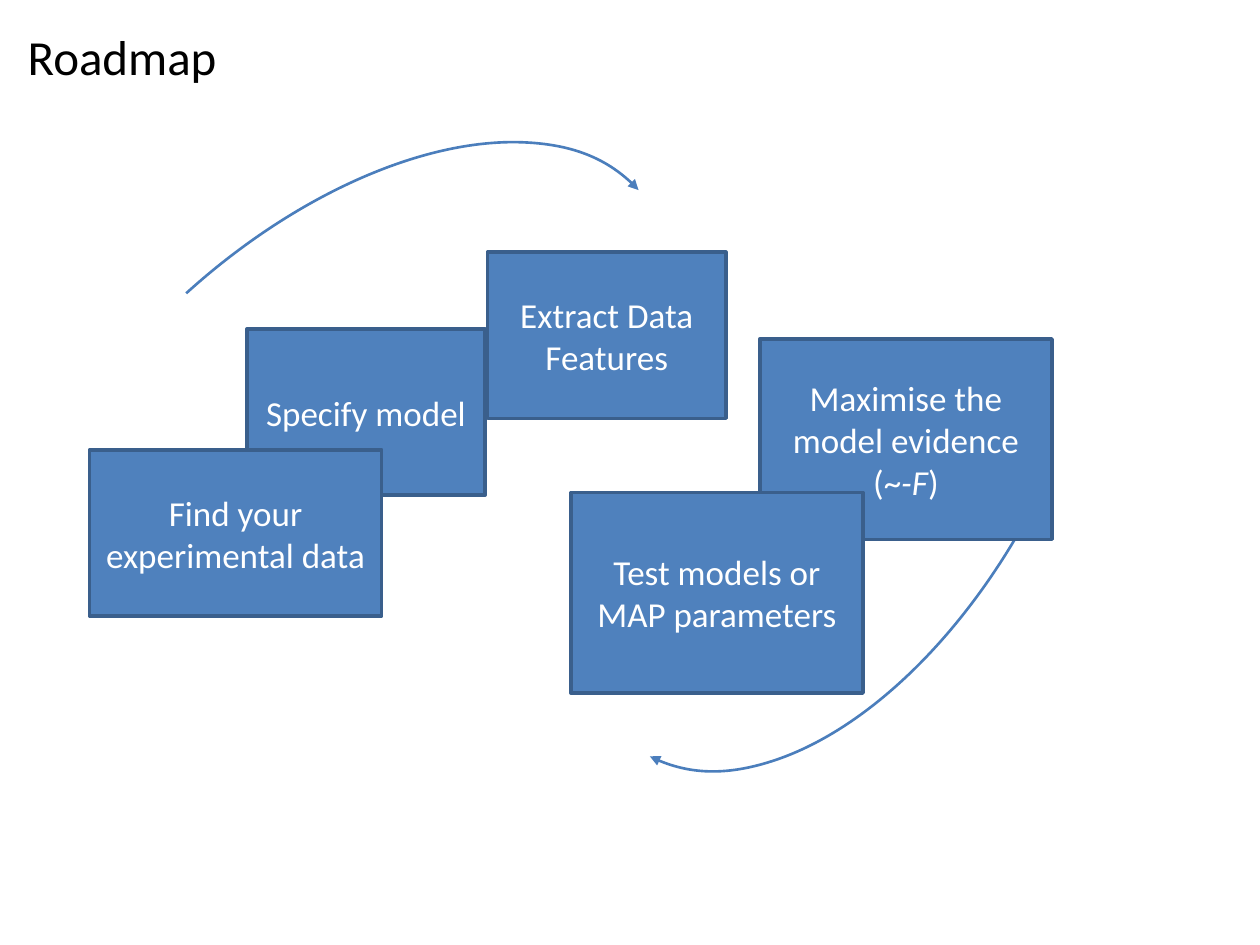
"""Build the Roadmap slide: five overlapping step boxes and two curved arrows."""
from lxml import etree
from pptx import Presentation
from pptx import util as u
from pptx.dml.color import RGBColor
from pptx.enum import shapes, text
from pptx.oxml.ns import qn

FONT = "Calibri"
COLORS = {"box": "4F81BD", "border": "3A5F8C", "arc": "4B7EBC",
          "white": "FFFFFF", "black": "000000"}
TITLE = "Roadmap"
TITLE_BOX = (0.12, 0.36, 2.13, 0.37)
SMALL, WIDE, LARGE = (1.89, 1.32), (2.32, 1.32), (2.32, 1.59)
STEPS = [
    ((1.96, 2.61), SMALL, [("Specify model", False)]),
    ((3.87, 2), SMALL, [("Extract Data Features", False)]),
    ((6.03, 2.69), LARGE,
     [("Maximise the model evidence (~", False), ("-F", True), (")", False)]),
    ((4.53, 3.91), LARGE, [("Test models or MAP parameters", False)]),
    ((0.71, 3.57), WIDE, [("Find your experimental data", False)]),
]
ARC_SIZE = (6.42, 3.61)
ARCS = [((3.41, 1.34), 117.1), ((-0.52, 1.86), 317.8)]


def rgb(name):
    return RGBColor.from_string(COLORS[name])


def add_run(p, content, size, color, italic=False):
    r = p.add_run()
    r.text = content
    r.font.name, r.font.size, r.font.italic = FONT, u.Pt(size), italic
    r.font.color.rgb = rgb(color)


def add_shape(s, kind, pos, size, fill, line, width):
    sp = s.shapes.add_shape(kind, *map(u.Inches, pos + size))
    sp.shadow.inherit = False
    sp.fill.solid()
    sp.fill.fore_color.rgb = rgb(fill)
    sp.line.color.rgb = rgb(line)
    sp.line.width = u.Pt(width)
    return sp


def add_arc(s, pos, rotation):
    sp = add_shape(s, shapes.MSO_SHAPE.ARC, pos, ARC_SIZE, "white", "arc", 1.5)
    sp.rotation = rotation
    etree.SubElement(sp.line._get_or_add_ln(), qn("a:tailEnd"), type="triangle")


def add_step(s, pos, size, runs):
    sp = add_shape(s, shapes.MSO_SHAPE.RECTANGLE, pos, size, "box", "border", 2)
    tf = sp.text_frame
    tf.word_wrap = True
    tf.vertical_anchor = text.MSO_ANCHOR.MIDDLE
    p = tf.paragraphs[0]
    p.alignment = text.PP_ALIGN.CENTER
    for content, italic in runs:
        add_run(p, content, 20, "white", italic)


def add_title(s):
    sp = s.shapes.title
    sp.left, sp.top, sp.width, sp.height = map(u.Inches, TITLE_BOX)
    tf = sp.text_frame
    tf.auto_size = text.MSO_AUTO_SIZE.NONE
    tf.vertical_anchor = text.MSO_ANCHOR.BOTTOM
    tf.paragraphs[0].alignment = text.PP_ALIGN.LEFT
    add_run(tf.paragraphs[0], TITLE, 28, "black")


def main():
    prs = Presentation()
    prs.slide_width, prs.slide_height = u.Inches(10), u.Inches(7.5)
    s = prs.slides.add_slide(prs.slide_layouts[5])
    for arc in ARCS:
        add_arc(s, *arc)
    add_title(s)
    for step in STEPS:
        add_step(s, *step)
    prs.save("out.pptx")


if __name__ == "__main__":
    main()
